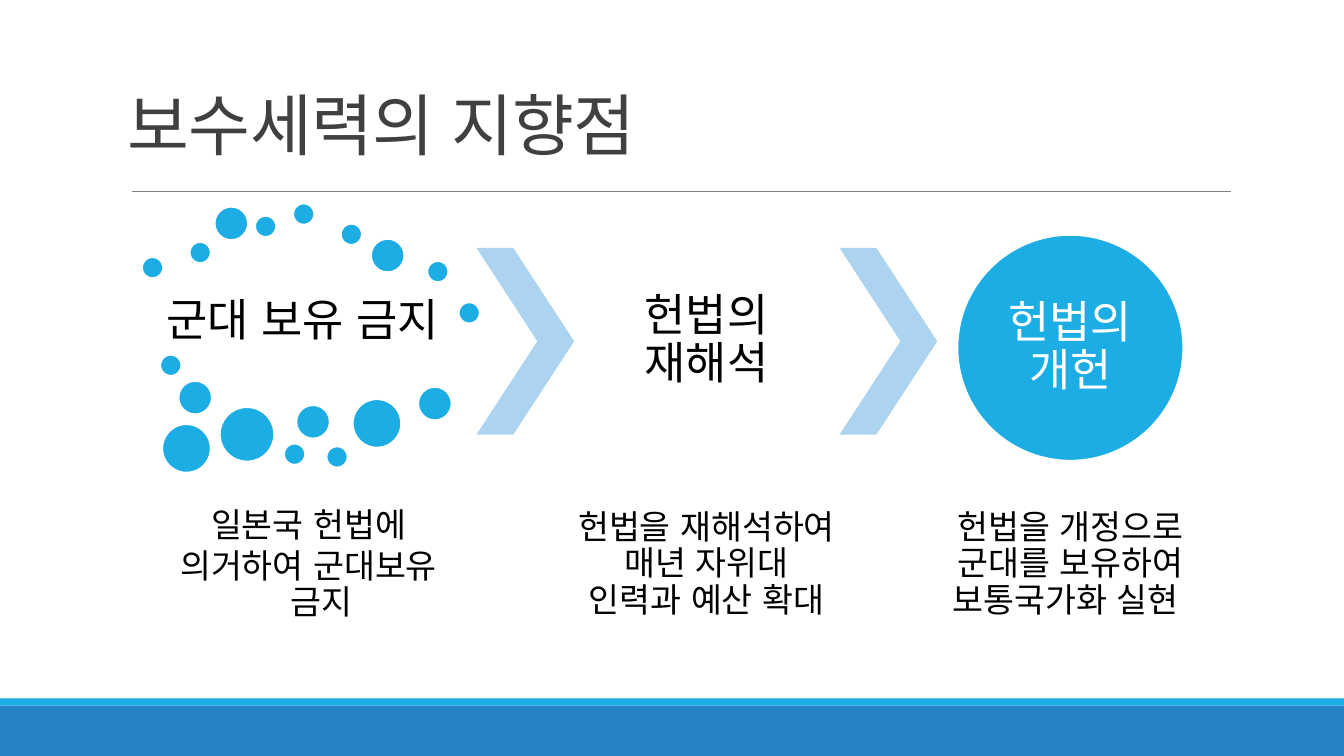
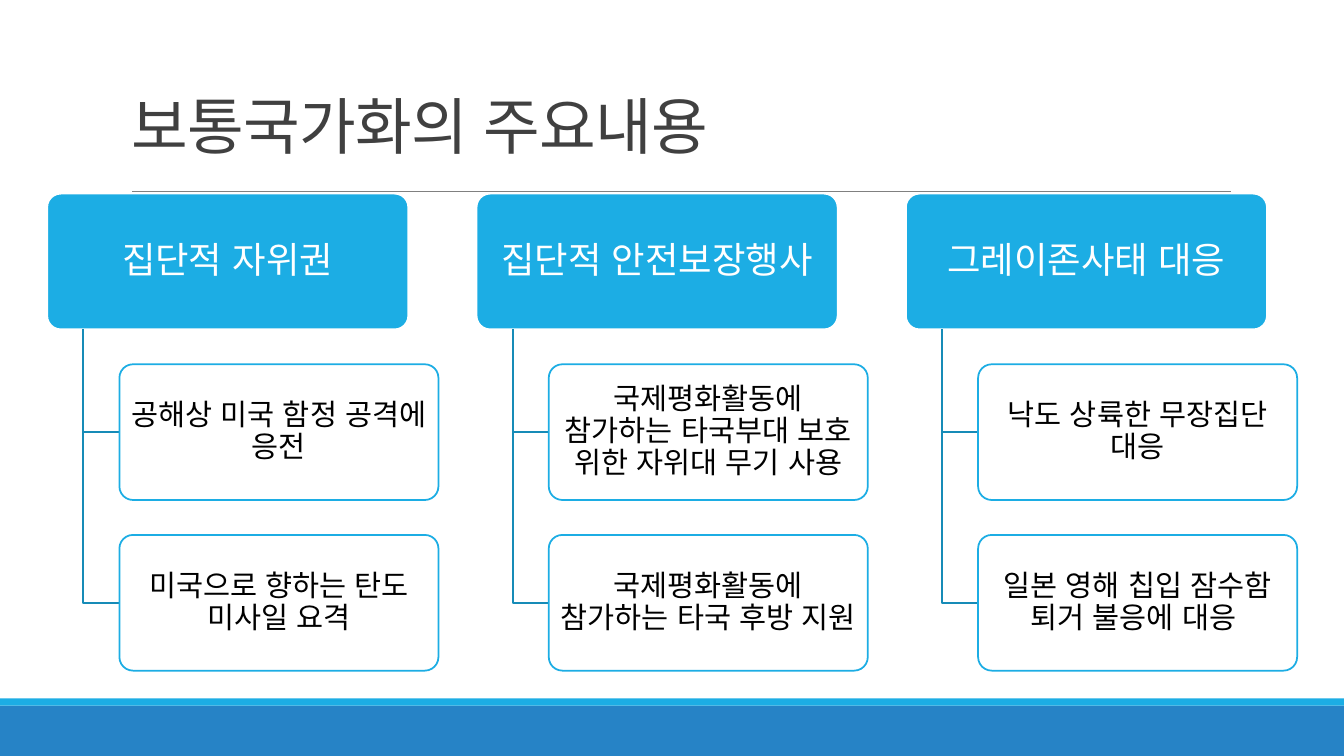
from dataclasses import dataclass

from lxml.etree import SubElement
from pptx import Presentation
from pptx.dml.color import RGBColor
from pptx.enum.lang import MSO_LANGUAGE_ID
from pptx.enum.shapes import MSO_CONNECTOR, MSO_SHAPE
from pptx.enum.text import MSO_ANCHOR, PP_ALIGN
from pptx.oxml.ns import qn
from pptx.util import Cm, Pt


@dataclass(frozen=True)
class Theme:
    white: str = "FFFFFF"
    black: str = "000000"
    title: str = "404040"
    rule: str = "808080"
    accent: str = "1CADE4"
    band: str = "2683C6"
    chevron: str = "ACD3EF"
    branch: str = "168BB7"
    latin_font: str = "Calibri"
    korean_font: str = "Noto Sans CJK KR"
    label_size: int = 32
    caption_size: int = 24
    header_size: int = 26
    card_size: int = 21
    outline: float = 1.25
    line_spacing: float = 0.9


class DeckBuilder:
    """Holds the style and the slide being drawn; lengths are centimetres."""

    def __init__(self, theme):
        self.theme = theme
        self.deck = Presentation()
        self.deck.slide_width = Cm(33.87)
        self.deck.slide_height = Cm(19.05)
        self.page = None

    def new_page(self, title, area, size, font):
        theme = self.theme
        self.page = self.deck.slides.add_slide(self.deck.slide_layouts[5])
        self.shape(MSO_SHAPE.RECTANGLE, (0, 17.78, 33.87, 1.27), theme.band)
        self.shape(MSO_SHAPE.RECTANGLE, (0, 17.6, 33.87, 0.18), theme.accent)
        self.rule(3.33, 31.01, 4.83)
        box = self.page.shapes.title
        box.left, box.top, box.width, box.height = map(Cm, area)
        frame = box.text_frame
        frame.word_wrap = True
        frame.vertical_anchor = MSO_ANCHOR.BOTTOM
        para = frame.paragraphs[0]
        para.alignment = PP_ALIGN.LEFT
        para.line_spacing = 0.85
        span = self.add_span(para, title, size, theme.title, font)
        span.font._element.set("spc", "-50")

    def add_span(self, para, text, size, color, font=None):
        span = para.add_run()
        span.text = text
        span.font.size = Pt(size)
        span.font.name = font or self.theme.korean_font
        span.font.color.rgb = RGBColor.from_string(color)
        span.font.language_id = MSO_LANGUAGE_ID.KOREAN
        east_asian = SubElement(span.font._element, qn("a:ea"))
        east_asian.set("typeface", self.theme.korean_font)
        return span

    def rule(self, left, right, top):
        line = self.page.shapes.add_connector(
            MSO_CONNECTOR.STRAIGHT, Cm(left), Cm(top), Cm(right), Cm(top))
        line.line.color.rgb = RGBColor.from_string(self.theme.rule)
        line.line.width = Pt(0.5)
        SubElement(line._element.spPr, qn("a:effectLst"))

    def set_outline(self, shape, color):
        if color is None:
            shape.line.fill.background()
        else:
            shape.line.color.rgb = RGBColor.from_string(color)
            shape.line.width = Pt(self.theme.outline)

    def shape(self, kind, area, fill, outline=None, adjustment=None):
        shape = self.page.shapes.add_shape(kind, *map(Cm, area))
        shape.shadow.inherit = False
        shape.fill.solid()
        shape.fill.fore_color.rgb = RGBColor.from_string(fill)
        self.set_outline(shape, outline)
        if adjustment is not None:
            shape.adjustments[0] = adjustment
        return shape

    def fill_text(self, box, lines, size, color, inset=0.08, hanging=0):
        """Fill a box with centred paragraphs, one for each line given."""
        frame = box.text_frame
        frame.word_wrap = True
        frame.vertical_anchor = MSO_ANCHOR.MIDDLE
        frame.margin_left = frame.margin_right = Cm(inset)
        frame.margin_top = frame.margin_bottom = Cm(inset)
        for index, text in enumerate(lines):
            para = frame.add_paragraph() if index else frame.paragraphs[0]
            para.alignment = PP_ALIGN.CENTER
            para.line_spacing = self.theme.line_spacing
            if index < len(lines) - 1:
                para.space_after = Pt(size * 0.15)
            if hanging:
                properties = para._p.get_or_add_pPr()
                properties.set("marL", str(Cm(hanging)))
                properties.set("indent", str(-Cm(hanging)))
            self.add_span(para, text, size, color)

    def text(self, area, lines, size, inset=0.08, hanging=0):
        box = self.page.shapes.add_textbox(*map(Cm, area))
        self.fill_text(box, lines, size, self.theme.black, inset, hanging)

    def chevron(self, left):
        self.shape(MSO_SHAPE.CHEVRON, (left, 6.25, 2.46, 4.7),
                   self.theme.chevron, adjustment=0.623)

    def circle(self, left, top, size):
        return self.shape(MSO_SHAPE.OVAL, (left, top, size, size),
                          self.theme.accent, self.theme.white)

    def card(self, area, text, size, fill, outline, color):
        box = self.shape(MSO_SHAPE.ROUNDED_RECTANGLE, area, fill, outline, 0.1)
        self.fill_text(box, [text], size, color, inset=0.1)

    def branch(self, left, top, right, bottom):
        """Draw an elbow that goes down and then right."""
        builder = self.page.shapes.build_freeform(Cm(left), Cm(top))
        builder.add_line_segments(
            [(Cm(left), Cm(bottom)), (Cm(right), Cm(bottom))], close=False)
        elbow = builder.convert_to_shape()
        elbow.shadow.inherit = False
        elbow.fill.background()
        self.set_outline(elbow, self.theme.branch)


SMALL, MEDIUM, LARGE, LARGEST = 0.53, 0.84, 1.22, 1.37
DOTS = [
    (3.58, 6.48, SMALL), (4.78, 6.1, SMALL), (5.41, 5.21, MEDIUM),
    (6.43, 5.44, SMALL), (7.39, 5.13, SMALL), (8.59, 5.64, SMALL),
    (9.35, 6.02, MEDIUM), (10.77, 6.58, SMALL), (11.56, 7.62, SMALL),
    (5.54, 10.26, LARGEST), (4.04, 8.94, SMALL), (4.5, 9.6, MEDIUM),
    (4.09, 10.69, LARGE), (7.16, 11.18, SMALL), (7.47, 10.21, MEDIUM),
    (8.23, 11.25, SMALL), (8.89, 10.06, LARGE), (10.54, 9.75, MEDIUM),
]
CAPTIONS = [
    (4.42, ["일본국 헌법에", "의거하여 군대보유 금지"], 0.64),
    (14.45, ["헌법을 재해석하여 매년 자위대 인력과 예산 확대"], 0),
    (23.62, ["헌법을 개정으로 군대를 보유하여 보통국가화 실현 "], 0),
]
COLUMNS = [
    ("집단적 자위권",
     ["공해상 미국 함정 공격에 응전", "미국으로 향하는 탄도 미사일 요격"]),
    ("집단적 안전보장행사",
     ["국제평화활동에 참가하는 타국부대 보호 위한 자위대 무기 사용",
      "국제평화활동에 참가하는 타국 후방 지원"]),
    ("그레이존사태 대응",
     ["낙도 상륙한 무장집단 대응", "일본 영해 칩입 잠수함 퇴거 불응에 대응 "]),
]


def draw_direction(builder):
    theme = builder.theme
    builder.new_page("보수세력의 지향점", (2.97, 1.22, 27.94, 3.05), 48,
                     theme.latin_font)
    for dot in DOTS:
        builder.circle(*dot)
    for left in (12.01, 21.16):
        builder.chevron(left)
    builder.text((3.4, 7.01, 8.46, 2.21), ["군대 보유 금지"], theme.label_size)
    builder.text((14.45, 6.25, 6.71, 4.7), ["헌법의 재해석"], theme.label_size)
    goal = builder.circle(24.13, 5.92, 5.69)
    builder.fill_text(goal, ["헌법의 개헌"], theme.label_size, theme.white,
                      inset=0)
    for left, lines, hanging in CAPTIONS:
        builder.text((left, 12.17, 6.71, 4.14), lines, theme.caption_size,
                     hanging=hanging)


def draw_contents(builder):
    theme = builder.theme
    builder.new_page("보통국가화의 주요내용", (3.05, 1.6, 27.94, 2.62), 44,
                     theme.korean_font)
    top, height, row_pitch, column_pitch = 4.88, 3.42, 4.3, 10.82
    for column, (header, cards) in enumerate(COLUMNS):
        left = 1.19 + column * column_pitch
        card_left = left + 1.82
        builder.card((left, top, 9.1, height), header, theme.header_size,
                     theme.accent, theme.white, theme.white)
        for row, text in enumerate(cards, start=1):
            card_top = top + row * row_pitch
            builder.branch(left + 0.91, top + height,
                           card_left, card_top + height / 2)
            builder.card((card_left, card_top, 8.04, height), text,
                         theme.card_size, theme.white, theme.accent, theme.black)


def main():
    builder = DeckBuilder(Theme())
    draw_direction(builder)
    draw_contents(builder)
    builder.deck.save("out.pptx")


if __name__ == "__main__":
    main()
